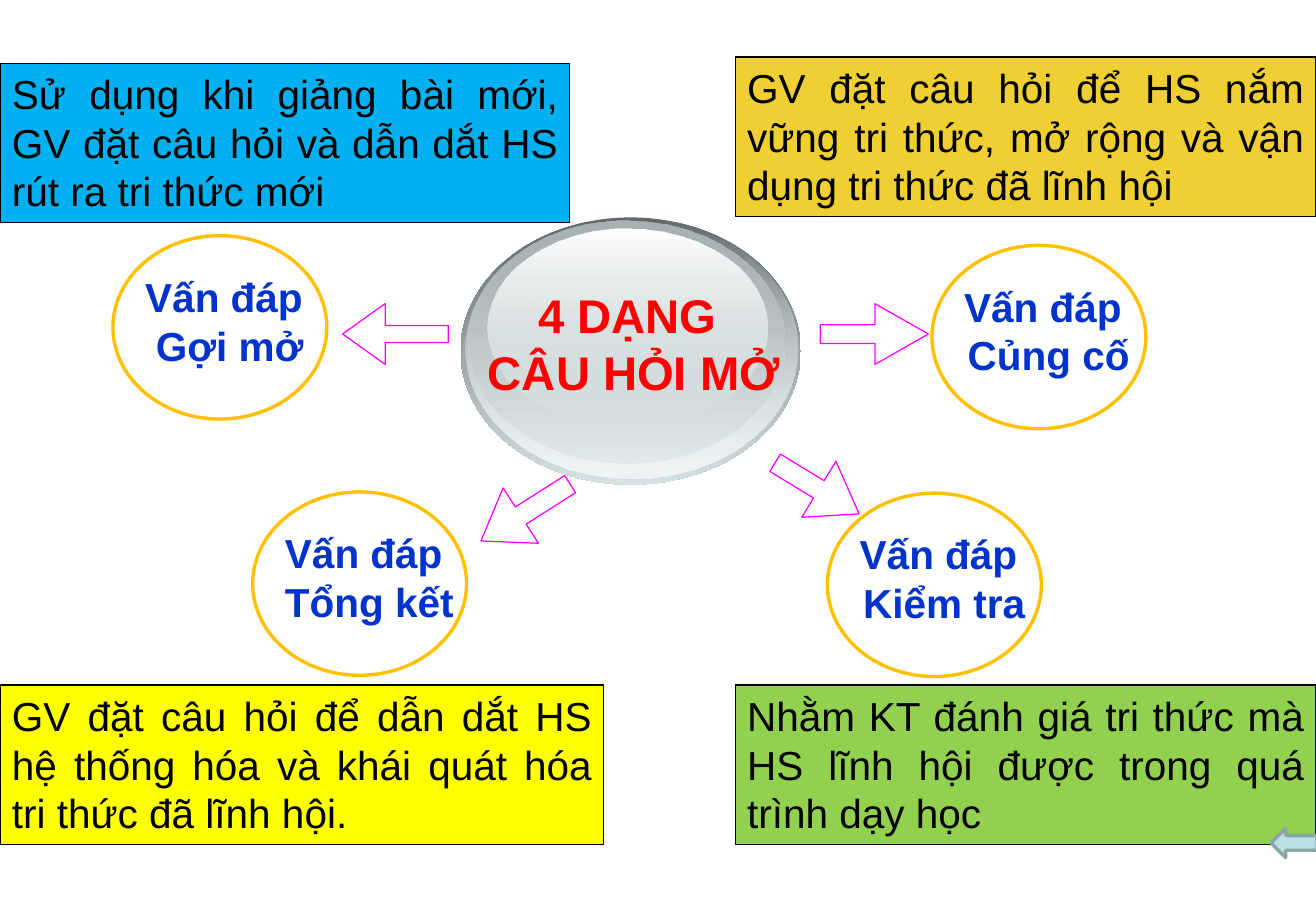
from lxml import etree
from pptx import Presentation
from pptx.dml.color import RGBColor
from pptx.enum import shapes, text
from pptx.oxml import ns
from pptx.util import Inches, Pt

COLORS = {
    "black": "000000", "white": "FFFFFF", "red": "FF0000", "label": "0033CC",
    "ring": "FFC000", "arrow": "FF00FF", "blue": "00B0F0", "gold": "EFCF31",
    "yellow": "FFFF00", "green": "92D050", "back": "BBE0E3",
    "back_line": "8AA6A8", "dark": "636869", "grey": "AAB2B3",
    "silver": "D6E1E2", "pale": "F1F5F5",
}

# box, then (colour, opacity %) at the top and at the bottom
BALL = [
    ((3.79, 1.79, 2.8, 2.2), ("dark", 100), ("silver", 100)),
    ((3.83, 1.8, 2.73, 2.14), ("silver", 0), ("pale", 100)),
    ((3.86, 1.82, 2.6, 2), ("grey", 100), ("silver", 48)),
    ((4.01, 1.88, 2.31, 1.63), ("white", 100), ("silver", 38)),
]
TITLE = ["4 DẠNG ", "CÂU HỎI MỞ"]

# left and top of the circle, second line of its label
CIRCLE_SIZE = (1.76, 1.51)
CIRCLES = [
    (0.93, 1.94, "Gợi mở"),
    (7.67, 2.02, "Củng cố"),
    (2.08, 4.05, "Tổng kết"),
    (6.81, 4.06, "Kiểm tra"),
]

# box, rotation, adjustments
ARROWS = [
    ((6.75, 2.5, 0.89, 0.5), 180, (0.31, 0.88)),
    ((3.89, 3.95, 0.87, 0.54), 327.5, (0.31, 0.72)),
    ((2.82, 2.5, 0.87, 0.5), 0, (0.28, 0.7)),
    ((6.32, 3.75, 0.81, 0.54), 211.3, (0.31, 0.72)),
]

NOTE_HEIGHT = 1.31
# left, top, width, fill, text
NOTES = [
    (0, 0.52, 4.69, "blue",
     "Sử dụng khi giảng bài mới, GV đặt câu hỏi và dẫn dắt HS rút ra tri thức mới"),
    (6.05, 0.47, 4.78, "gold",
     "GV đặt câu hỏi để HS nắm vững tri thức, mở rộng và vận dụng tri thức đã lĩnh hội"),
    (0, 5.64, 4.97, "yellow",
     "GV đặt câu hỏi để dẫn dắt HS hệ thống hóa và khái quát hóa tri thức đã lĩnh hội."),
    (6.05, 5.64, 4.78, "green",
     "Nhằm KT đánh giá tri thức mà HS lĩnh hội được trong quá trình dạy học"),
]

prs = Presentation()
prs.slide_width, prs.slide_height = Inches(10.83), Inches(7.5)
s = prs.slides.add_slide(prs.slide_layouts[6])


def rgb(name):
    return RGBColor.from_string(COLORS[name])


def add_shape(kind, box, fill=None, line=None, width=0.75):
    sp = s.shapes.add_shape(kind, *map(Inches, box))
    sp.shadow.inherit = False
    if fill:
        sp.fill.solid()
        sp.fill.fore_color.rgb = rgb(fill)
    else:
        sp.fill.background()
    if line:
        sp.line.color.rgb = rgb(line)
        sp.line.width = Pt(width)
    else:
        sp.line.fill.background()
    return sp


def fill_gradient(sp, stops):
    """Fill from top to bottom with two (colour, opacity %) stops."""
    sp.fill.gradient()
    sp.fill.gradient_angle = 270
    for stop, (color, _) in zip(sp.fill.gradient_stops, stops):
        stop.color.rgb = rgb(color)
    colors = sp.element.spPr.iter(ns.qn("a:srgbClr"))
    for clr, (_, opacity) in zip(list(colors), stops):
        if opacity < 100:
            etree.SubElement(clr, ns.qn("a:alpha"), val=str(opacity * 1000))


def write(sp, lines, size=24, color="black", bold=False, wrap=True,
          align=text.PP_ALIGN.CENTER, left=0.1):
    tf = sp.text_frame
    tf.word_wrap = wrap
    tf.vertical_anchor = text.MSO_ANCHOR.TOP
    tf.margin_left = Inches(left)
    for i, line in enumerate(lines):
        p = tf.add_paragraph() if i else tf.paragraphs[0]
        p.alignment = align
        r = p.add_run()
        r.text = line
        r.font.name, r.font.size, r.font.bold = "Arial", Pt(size), bold
        r.font.color.rgb = rgb(color)


def add_text(box, lines, **fmt):
    write(s.shapes.add_textbox(*map(Inches, box)), lines, **fmt)


kinds = shapes.MSO_SHAPE

for box, *stops in BALL:
    fill_gradient(add_shape(kinds.OVAL, box), stops)
add_text((3.37, 2.31, 3.19, 1.04), TITLE, size=28, color="red", bold=True,
         left=0.6)

for box, rotation, adjustments in ARROWS:
    sp = add_shape(kinds.LEFT_ARROW, box, line="arrow")
    sp.rotation = rotation
    for i, value in enumerate(adjustments):
        sp.adjustments[i] = value

for x, y, w, fill, note in NOTES:
    sp = add_shape(kinds.RECTANGLE, (x, y, w, NOTE_HEIGHT), fill, "black")
    write(sp, [note], align=text.PP_ALIGN.JUSTIFY)

for x, y, name in CIRCLES:
    add_shape(kinds.OVAL, (x, y, *CIRCLE_SIZE), "white", "ring", 2)
    add_text((x + 0.16, y + 0.25, 1.6, 0.91), ["Vấn đáp ", name],
             color="label", bold=True, wrap=False)

add_shape(kinds.LEFT_ARROW, (10.46, 6.82, 0.38, 0.24), "back", "back_line", 2)

prs.save("out.pptx")
